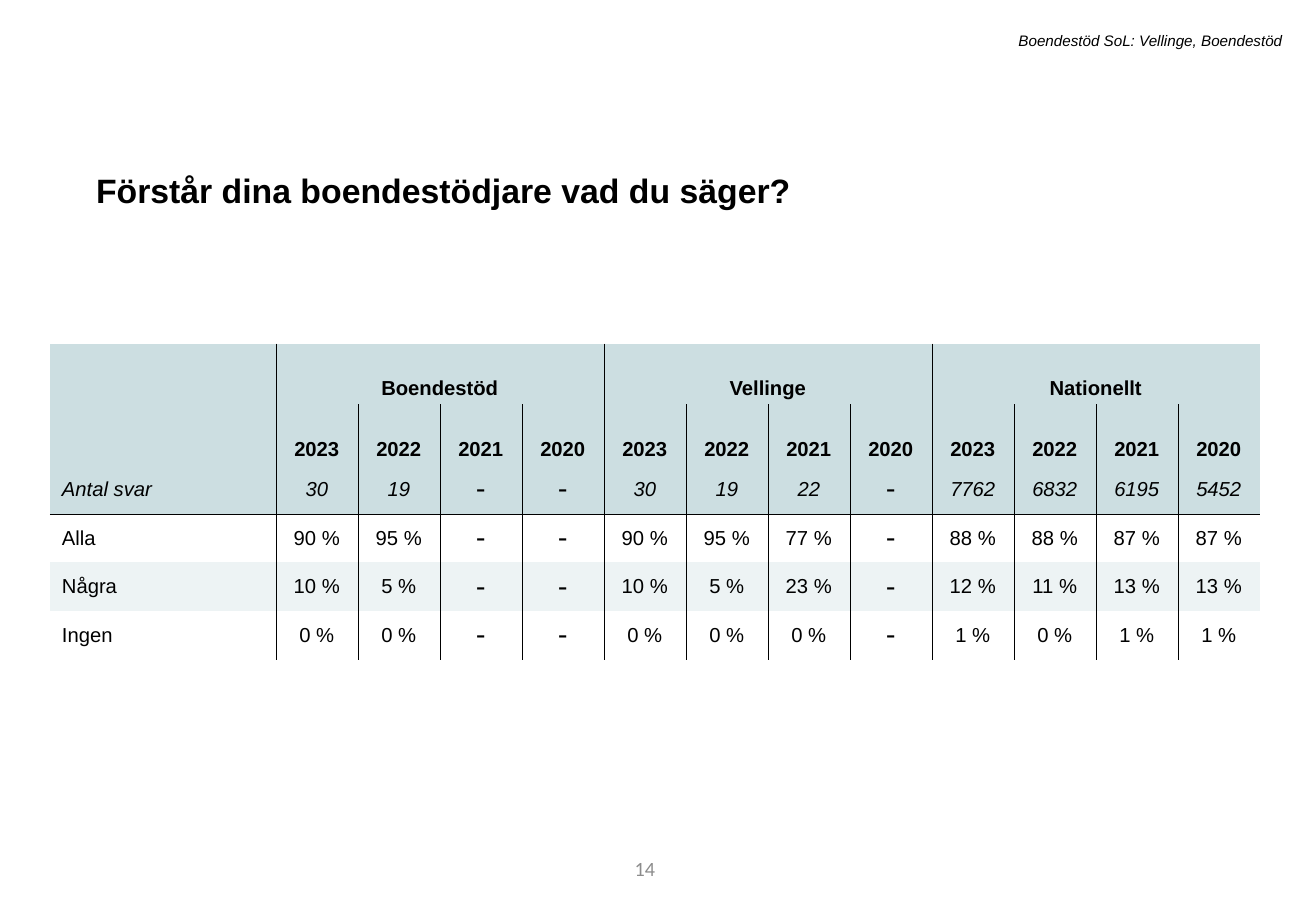
from dataclasses import dataclass, replace
from typing import Optional

from lxml import etree
from pptx import Presentation
from pptx.dml.color import RGBColor
from pptx.enum.text import MSO_ANCHOR, MSO_AUTO_SIZE, PP_ALIGN
from pptx.oxml.ns import qn
from pptx.util import Emu, Pt

LEFT, CENTER, RIGHT = PP_ALIGN.LEFT, PP_ALIGN.CENTER, PP_ALIGN.RIGHT
TOP, MIDDLE, BOTTOM = MSO_ANCHOR.TOP, MSO_ANCHOR.MIDDLE, MSO_ANCHOR.BOTTOM
GROW = MSO_AUTO_SIZE.SHAPE_TO_FIT_TEXT

EMU_PER_PX = 4572  # 200 px to the inch
TITLE_ONLY_LAYOUT = 5
NO_STYLE_NO_GRID = "{2D5ABB26-0587-4C30-8999-92F81FD0307C}"


@dataclass(frozen=True)
class TextStyle:
    size: float
    font: str = "Arial"
    color: str = "000000"
    bold: bool = False
    italic: bool = False
    align: PP_ALIGN = LEFT
    anchor: MSO_ANCHOR = MIDDLE


@dataclass(frozen=True)
class Theme:
    header_fill: str = "CCDEE1"
    band_fill: str = "EDF3F4"
    rule_color: str = "000000"
    rule_width: float = 0.25
    title: TextStyle = TextStyle(20, bold=True, anchor=TOP)
    unit_name: TextStyle = TextStyle(9, italic=True, align=RIGHT, anchor=TOP)
    page_number: TextStyle = TextStyle(12, "Calibri", "8C8C8C", align=RIGHT)
    heading: TextStyle = TextStyle(12, bold=True, align=CENTER, anchor=BOTTOM)
    label: TextStyle = TextStyle(12)
    value: TextStyle = TextStyle(12, align=CENTER)
    missing: TextStyle = TextStyle(18, "Calibri", align=CENTER)


@dataclass(frozen=True)
class Box:
    left: int
    top: int
    width: int
    height: int

    def emu(self) -> tuple[Emu, Emu, Emu, Emu]:
        return px(self.left), px(self.top), px(self.width), px(self.height)


@dataclass(frozen=True)
class Caption:
    text: str
    box: Box
    style: TextStyle


@dataclass(frozen=True)
class AnswerRow:
    label: str
    values: tuple[Optional[int], ...]
    unit: str = " %"
    fill: Optional[str] = None
    italic: bool = False


THEME = Theme()
SLIDE_WIDTH, SLIDE_HEIGHT = 2166, 1500
TITLE = Caption("Förstår dina boendestödjare vad du säger?",
                Box(138, 256, 1880, 94), THEME.title)
CAPTIONS = (
    Caption("14", Box(610, 1390, 488, 80), THEME.page_number),
    Caption("Boendestöd SoL: Vellinge, Boendestöd",
            Box(358, 42, 1772, 50), THEME.unit_name),
)

TABLE_LEFT, TABLE_TOP = 82, 566
LABEL_WIDTH, YEAR_WIDTH = 372, 135
HEADING_HEIGHT, ANSWER_HEIGHT, CELL_PADDING = 100, 80, 8
GROUPS = ("Boendestöd", "Vellinge", "Nationellt")
YEARS = ("2023", "2022", "2021", "2020")
COLUMN_COUNT = 1 + len(GROUPS) * len(YEARS)
HEADING_ROWS = 2
ANSWERS = (
    AnswerRow("Antal svar", (30, 19, None, None, 30, 19, 22, None, 7762, 6832, 6195, 5452),
              unit="", fill=THEME.header_fill, italic=True),
    AnswerRow("Alla", (90, 95, None, None, 90, 95, 77, None, 88, 88, 87, 87)),
    AnswerRow("Några", (10, 5, None, None, 10, 5, 23, None, 12, 11, 13, 13),
              fill=THEME.band_fill),
    AnswerRow("Ingen", (0, 0, None, None, 0, 0, 0, None, 1, 0, 1, 1)),
)


def px(length: int) -> Emu:
    return Emu(length * EMU_PER_PX)


def write(frame, text: str, style: TextStyle) -> None:
    frame.text = text
    paragraph = frame.paragraphs[0]
    paragraph.alignment = style.align
    for run in paragraph.runs:
        run.font.name = style.font
        run.font.size = Pt(style.size)
        run.font.bold = style.bold
        run.font.italic = style.italic
        run.font.color.rgb = RGBColor.from_string(style.color)


def write_caption(shape, caption: Caption) -> None:
    shape.left, shape.top, shape.width, shape.height = caption.box.emu()
    frame = shape.text_frame
    write(frame, caption.text, caption.style)
    frame.word_wrap = True
    frame.vertical_anchor = caption.style.anchor
    if caption.style.anchor == TOP:
        frame.auto_size = GROW


def write_cell(cell, text: str, style: TextStyle) -> None:
    write(cell.text_frame, text, style)
    cell.vertical_anchor = style.anchor


def rule(cell, side: str) -> None:
    """Draw a thin line on one side of a cell: lnL, lnR, lnT or lnB."""
    line = etree.SubElement(cell._tc.get_or_add_tcPr(), qn(f"a:{side}"),
                            w=str(Pt(THEME.rule_width)))
    solid = etree.SubElement(line, qn("a:solidFill"))
    etree.SubElement(solid, qn("a:srgbClr"), val=THEME.rule_color)


def finish_cell(cell, fill: Optional[str], ruled_left: bool, ruled_below: bool) -> None:
    """Set padding, rules and fill, with the rules ahead of the fill as the schema asks."""
    cell.margin_top = cell.margin_bottom = px(CELL_PADDING)
    if ruled_left:
        rule(cell, "lnL")
    if ruled_below:
        rule(cell, "lnB")
    if fill:
        cell.fill.solid()
        cell.fill.fore_color.rgb = RGBColor.from_string(fill)
    else:
        cell.fill.background()


def write_headings(table) -> None:
    for group_index, group in enumerate(GROUPS):
        first = 1 + group_index * len(YEARS)
        group_cell = table.cell(0, first)
        group_cell.merge(table.cell(0, first + len(YEARS) - 1))
        write_cell(group_cell, group, THEME.heading)
        for offset, year in enumerate(YEARS):
            write_cell(table.cell(1, first + offset), year, THEME.heading)


def write_answer(table, row: int, answer: AnswerRow) -> None:
    write_cell(table.cell(row, 0), answer.label, replace(THEME.label, italic=answer.italic))
    value_style = replace(THEME.value, italic=answer.italic)
    for column, value in enumerate(answer.values, start=1):
        if value is None:
            write_cell(table.cell(row, column), "-", THEME.missing)
        else:
            write_cell(table.cell(row, column), f"{value}{answer.unit}", value_style)


def add_answer_table(slide) -> None:
    heights = [HEADING_HEIGHT] * HEADING_ROWS + [ANSWER_HEIGHT] * len(ANSWERS)
    widths = [LABEL_WIDTH] + [YEAR_WIDTH] * (COLUMN_COUNT - 1)
    box = Box(TABLE_LEFT, TABLE_TOP, sum(widths), sum(heights))
    table = slide.shapes.add_table(len(heights), len(widths), *box.emu()).table
    table.first_row = table.horz_banding = False
    table._tbl.tblPr.find(qn("a:tableStyleId")).text = NO_STYLE_NO_GRID
    for table_row, height in zip(table.rows, heights):
        table_row.height = px(height)
    for table_column, width in zip(table.columns, widths):
        table_column.width = px(width)

    write_headings(table)
    for row, answer in enumerate(ANSWERS, start=HEADING_ROWS):
        write_answer(table, row, answer)

    fills = [THEME.header_fill] * HEADING_ROWS + [answer.fill for answer in ANSWERS]
    for row, fill in enumerate(fills):
        for column in range(COLUMN_COUNT):
            starts_group = column % len(YEARS) == 1
            finish_cell(table.cell(row, column), fill,
                        ruled_left=column > 0 and (row > 0 or starts_group),
                        ruled_below=row == HEADING_ROWS)


def main() -> None:
    deck = Presentation()
    deck.slide_width, deck.slide_height = px(SLIDE_WIDTH), px(SLIDE_HEIGHT)
    slide = deck.slides.add_slide(deck.slide_layouts[TITLE_ONLY_LAYOUT])
    write_caption(slide.shapes.title, TITLE)
    slide.shapes.title.text_frame.paragraphs[0].line_spacing = 1.2
    for caption in CAPTIONS:
        write_caption(slide.shapes.add_textbox(*caption.box.emu()), caption)
    add_answer_table(slide)
    deck.save("out.pptx")


if __name__ == "__main__":
    main()
